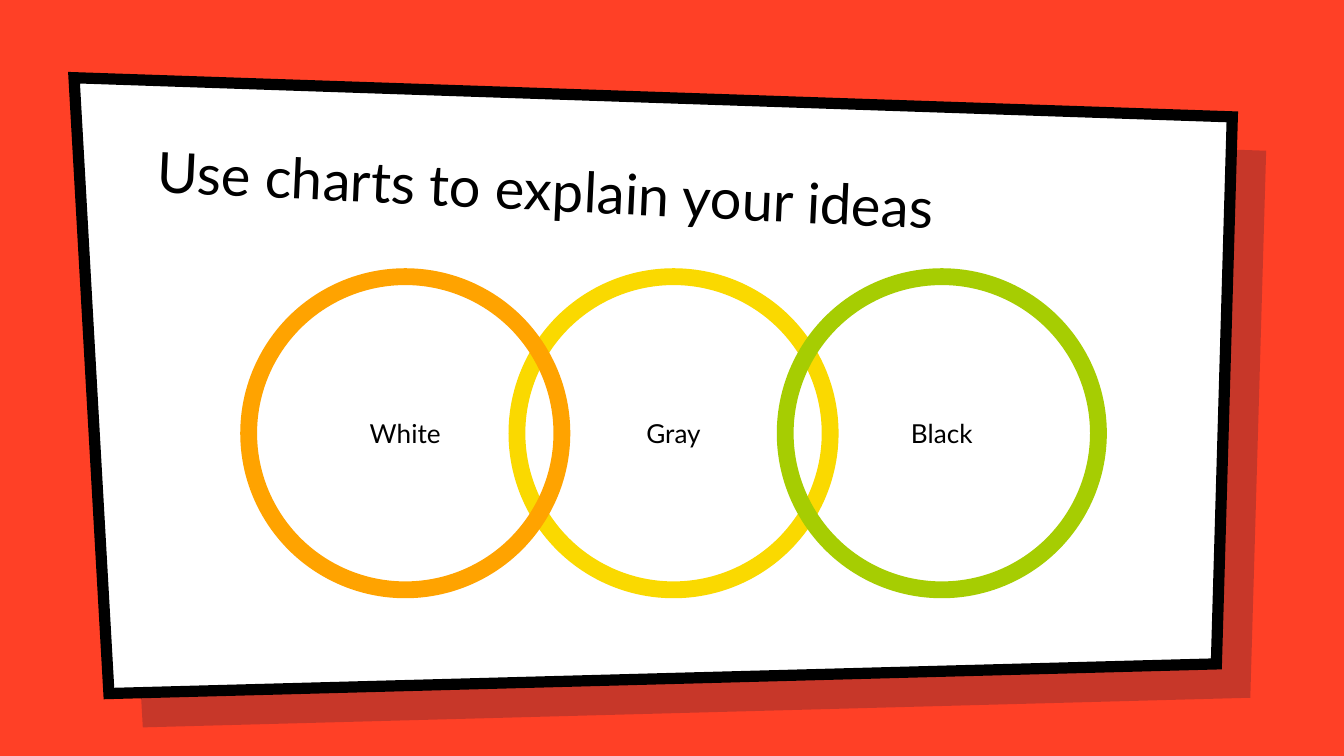
"""Build a slide with three linked circles on a tilted panel."""
from lxml import etree
from pptx import Presentation
from pptx.dml.color import RGBColor
from pptx.enum.shapes import MSO_SHAPE
from pptx.enum.text import MSO_ANCHOR, PP_ALIGN
from pptx.oxml.ns import qn
from pptx.util import Cm, Pt

COLOURS = {
    "background": "FF4026",
    "shadow": "001936",
    "panel": "FFFFFF",
    "ink": "000000",
    "orange": "FFA300",
    "yellow": "FAD900",
    "green": "A6CD02",
}
PANEL_CORNERS = [(1.4, 1.47), (23.29, 2.21), (22.99, 12.55), (2.06, 13.11)]
SHADOW_OFFSET = 0.64
CIRCLE_LEFT, CIRCLE_TOP, CIRCLE_SIZE, CIRCLE_STEP = 4.7, 5.23, 5.92, 5.07
CIRCLES = [(1, "Gray", "yellow"), (0, "White", "orange"), (2, "Black", "green")]


class TiltedSlide:
    """Hold the style and the current slide."""

    font_name = "Lato"

    def __init__(self, slide):
        self.slide = slide
        self.paint(slide.background.fill, "background")

    def paint(self, fill, colour):
        fill.solid()
        fill.fore_color.rgb = RGBColor.from_string(COLOURS[colour])

    def outline(self, shape, colour, width):
        self.paint(shape.line.fill, colour)
        shape.line.width = Pt(width)

    def set_text(self, shape, text, size, anchor, align):
        frame = shape.text_frame
        frame.text = text
        frame.word_wrap = True
        frame.vertical_anchor = anchor
        frame.margin_left = frame.margin_right = Cm(0.25)
        frame.margin_top = frame.margin_bottom = Cm(0.25)
        paragraph = frame.paragraphs[0]
        paragraph.alignment = align
        paragraph.font.name = self.font_name
        paragraph.font.size = Pt(size)
        self.paint(paragraph.font.fill, "ink")

    def panel(self, colour, offset=0):
        corners = [(Cm(x + offset), Cm(y + offset)) for x, y in PANEL_CORNERS]
        builder = self.slide.shapes.build_freeform(*corners[0])
        builder.add_line_segments(corners[1:], close=True)
        panel = builder.convert_to_shape()
        panel.shadow.inherit = False
        self.paint(panel.fill, colour)
        panel.line.fill.background()
        return panel

    def shadow(self):
        panel = self.panel("shadow", SHADOW_OFFSET)
        colour = panel.element.spPr.find(f"{qn('a:solidFill')}/{qn('a:srgbClr')}")
        etree.SubElement(colour, qn("a:alpha"), val="22000")

    def framed_panel(self):
        panel = self.panel("panel")
        self.outline(panel, "ink", 6)
        line = panel.element.spPr.find(qn("a:ln"))
        etree.SubElement(line, qn("a:miter"), lim="800000")

    def title(self, text):
        title = self.slide.shapes.title
        title.left, title.top = Cm(2.72), Cm(2.44)
        title.width, title.height = Cm(19.53), Cm(2.11)
        title.rotation = 2.7
        self.set_text(title, text, 30, MSO_ANCHOR.BOTTOM, PP_ALIGN.LEFT)
        title.element.getparent().append(title.element)

    def circle(self, position, label, colour):
        left = Cm(CIRCLE_LEFT + position * CIRCLE_STEP)
        circle = self.slide.shapes.add_shape(
            MSO_SHAPE.OVAL, left, Cm(CIRCLE_TOP), Cm(CIRCLE_SIZE), Cm(CIRCLE_SIZE)
        )
        circle.shadow.inherit = False
        circle.fill.background()
        self.outline(circle, colour, 9)
        self.set_text(circle, label, 14, MSO_ANCHOR.MIDDLE, PP_ALIGN.CENTER)


def main():
    presentation = Presentation()
    presentation.slide_width, presentation.slide_height = Cm(25.4), Cm(14.29)
    title_only = presentation.slide_layouts[5]
    ideas = TiltedSlide(presentation.slides.add_slide(title_only))
    ideas.shadow()
    ideas.framed_panel()
    ideas.title("Use charts to explain your ideas")
    for position, label, colour in CIRCLES:
        ideas.circle(position, label, colour)
    presentation.save("out.pptx")


if __name__ == "__main__":
    main()
